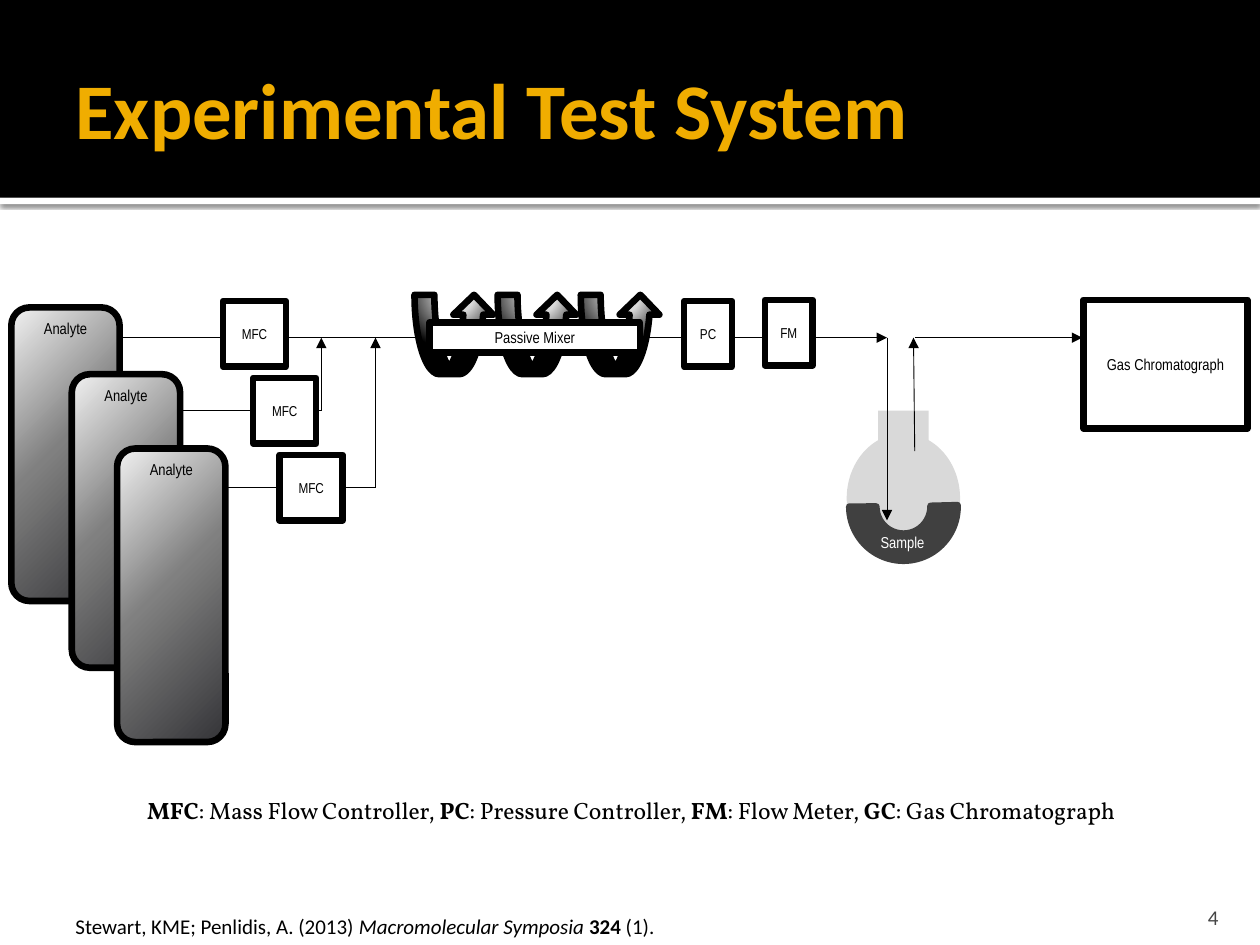
from pptx import Presentation
from pptx.dml.color import RGBColor
from pptx.enum.shapes import MSO_CONNECTOR, MSO_SHAPE as SHAPE
from pptx.enum.text import MSO_ANCHOR, PP_ALIGN
from pptx.oxml import parse_xml
from pptx.oxml.ns import nsdecls
from pptx.util import Inches, Pt

COLORS = {
    "black": "000000", "white": "FFFFFF", "gold": "F0AD00", "number": "454545",
    "glass": "D9D9D9", "sample": "404040",
}
RGB = {name: RGBColor.from_string(value) for name, value in COLORS.items()}
# Circular gradients: colour stops and the rectangle they start from
GRADIENTS = {
    "cylinder": ([(0, "343437"), (54, "808080"), (100, "F2F2F2")], (100, 100, 0, 0)),
    "coil": ([(0, "D9D9D9"), (35, "D9D9D9"), (100, "000000")], (50, -80, 50, 180)),
}
FLOW_Y = 2.68
INLET_X, OUTLET_X = 7.04, 7.26

prs = Presentation()
prs.slide_width, prs.slide_height = Inches(10), Inches(7.5)
s = prs.slides.add_slide(prs.slide_layouts[5])


def add_box(kind, at, fill, line=None, text="", size=9, anchor=MSO_ANCHOR.MIDDLE):
    """Add a preset shape with a plain or gradient fill and a centred label."""
    sp = s.shapes.add_shape(kind, *map(Inches, at))
    sp.shadow.inherit = False
    if fill in GRADIENTS:
        stops, (l, t, r, b) = GRADIENTS[fill]
        gs = "".join(f'<a:gs pos="{pos * 1000}"><a:srgbClr val="{c}"/></a:gs>' for pos, c in stops)
        sp.element.spPr.prstGeom.addnext(parse_xml(
            f'<a:gradFill {nsdecls("a")} rotWithShape="1"><a:gsLst>{gs}</a:gsLst>'
            f'<a:path path="circle"><a:fillToRect l="{l * 1000}" t="{t * 1000}" '
            f'r="{r * 1000}" b="{b * 1000}"/></a:path></a:gradFill>'))
    else:
        sp.fill.solid()
        sp.fill.fore_color.rgb = RGB[fill]
    if line:
        sp.line.color.rgb = RGB[line]
        sp.line.width = Pt(3.78)
    else:
        sp.line.fill.background()
    if text:
        tf = sp.text_frame
        tf.text = text
        tf.vertical_anchor = anchor
        p = tf.paragraphs[0]
        p.alignment = PP_ALIGN.CENTER
        font = p.runs[0].font
        font.name, font.size, font.color.rgb = "Arial Narrow", Pt(size), RGB["black"]
    return sp


def add_line(x1, y1, x2, y2, arrow=True):
    cx = s.shapes.add_connector(MSO_CONNECTOR.STRAIGHT, *map(Inches, (x1, y1, x2, y2)))
    cx.line.color.rgb = RGB["black"]
    cx.line.width = Pt(0.5)
    if arrow:
        cx.line._get_or_add_ln().append(parse_xml(f'<a:tailEnd {nsdecls("a")} type="triangle"/>'))
    cx.element.spPr.append(parse_xml(f'<a:effectLst {nsdecls("a")}/>'))


# Header band and title
title = s.shapes.title
strip = add_box(SHAPE.RECTANGLE, (0, 1.57, 10, 0.05), "white")
band = add_box(SHAPE.RECTANGLE, (0, 0, 10, 1.57), "black")
for sp in (strip, band):
    title.element.addprevious(sp.element)
strip.element.spPr.find("{*}effectLst").append(parse_xml(
    f'<a:outerShdw {nsdecls("a")} blurRad="{Pt(2.5)}" dist="{Pt(0.8)}" dir="5400000" '
    'algn="t" rotWithShape="0"><a:srgbClr val="000000"><a:alpha val="60000"/>'
    '</a:srgbClr></a:outerShdw>'))

title.left, title.top, title.width, title.height = map(Inches, (0.5, 0.17, 9, 1.37))
tf = title.text_frame
tf.text = "Experimental Test System"
tf.vertical_anchor = MSO_ANCHOR.MIDDLE
tf.margin_left, tf.margin_right = Inches(0.1), Inches(0.05)
p = tf.paragraphs[0]
p.alignment = PP_ALIGN.LEFT
font = p.runs[0].font
font.name, font.size, font.bold, font.color.rgb = "Calibri", Pt(45), True, RGB["gold"]

# Gas lines run behind the boxes
cylinders = [(0.09, 2.44), (0.57, 2.97), (0.93, 3.56)]


def add_cylinder(x, y):
    add_box(SHAPE.ROUNDED_RECTANGLE, (x, y, 0.86, 2.33), "cylinder", "black", "Analyte",
            anchor=MSO_ANCHOR.TOP)


add_cylinder(*cylinders[0])
add_line(0.95, FLOW_Y, INLET_X, FLOW_Y)
for x, y, join_x in [(1.38, 3.26, 2.55), (1.81, 3.87, 2.98)]:
    add_line(x, y, join_x, y, arrow=False)
    add_line(join_x, y, join_x, FLOW_Y)

# Controllers and meter
for text, x, y, w in [("MFC", 1.77, 2.39, 0.5), ("MFC", 2.01, 3, 0.5), ("MFC", 2.22, 3.61, 0.5),
                      ("PC", 5.43, 2.39, 0.38), ("FM", 6.07, 2.38, 0.38)]:
    add_box(SHAPE.RECTANGLE, (x, y, w, 0.52), "white", "black", text, 8.2)

# Sample flask, its inlet and outlet, and the chromatograph
add_box(SHAPE.OVAL, (6.72, 3.44, 0.9, 1.03), "glass")
add_box(SHAPE.RECTANGLE, (6.97, 3.26, 0.4, 0.46), "glass")
add_line(INLET_X, FLOW_Y, INLET_X, 4.13)
add_line(OUTLET_X, 3.58, 7.25, FLOW_Y)
add_line(OUTLET_X, FLOW_Y, 8.59, FLOW_Y)
add_box(SHAPE.RECTANGLE, (8.6, 2.38, 1.3, 1.02), "white", "black", "Gas Chromatograph")
liquid = add_box(SHAPE.BLOCK_ARC, (6.74, 3.59, 0.86, 0.86), "sample", "sample")
liquid.rotation = 180
for i, value in enumerate((107.09, 0, 0.25)):
    liquid.adjustments[i] = value

# Passive mixer
for i in range(3):
    add_box(SHAPE.CURVED_UP_ARROW, (3.29 + 0.66 * i, 2.34, 0.63, 0.63), "coil", "black")
add_box(SHAPE.RECTANGLE, (3.41, 2.56, 1.67, 0.24), "white", "black", "Passive Mixer")

for x, y in cylinders[1:]:
    add_cylinder(x, y)

# Free text: place, font, size, colour, wrap, runs as (text, style)
legend = [("MFC", "b"), (": Mass Flow Controller, ", ""), ("PC", "b"),
          (": Pressure Controller, ", ""), ("FM", "b"), (": Flow Meter, ", ""),
          ("GC", "b"), (": Gas Chromatograph", "")]
citation = [("Stewart, KME; Penlidis, A. (2013) ", ""), ("Macromolecular Symposia ", "i"),
            ("324", "b"), (" (1).", "")]
for at, name, size, color, wrap, runs in [
    ((6.89, 4.18, 0.55, 0.25), "Arial Narrow", 9, "white", False, [("Sample", "")]),
    ((1.07, 6.27, 8.27, 0.33), "Vollkorn", 13.5, "black", False, legend),
    ((0.5, 7.2, 5.75, 0.3), "Calibri", 12, "black", True, citation),
    ((8.97, 7.08, 0.8, 0.3), "Calibri", 12, "number", True, [("4", "")]),
]:
    number = s.shapes.add_textbox(*map(Inches, at))
    tf = number.text_frame
    tf.word_wrap = wrap
    p = tf.paragraphs[0]
    for text, style in runs:
        r = p.add_run()
        r.text = text
        r.font.name, r.font.size, r.font.color.rgb = name, Pt(size), RGB[color]
        r.font.bold, r.font.italic = style == "b", style == "i"

# The page number, added last, sits at the bottom right
tf.vertical_anchor = MSO_ANCHOR.BOTTOM
tf.margin_bottom = 0
p.alignment = PP_ALIGN.RIGHT

prs.save("out.pptx")
